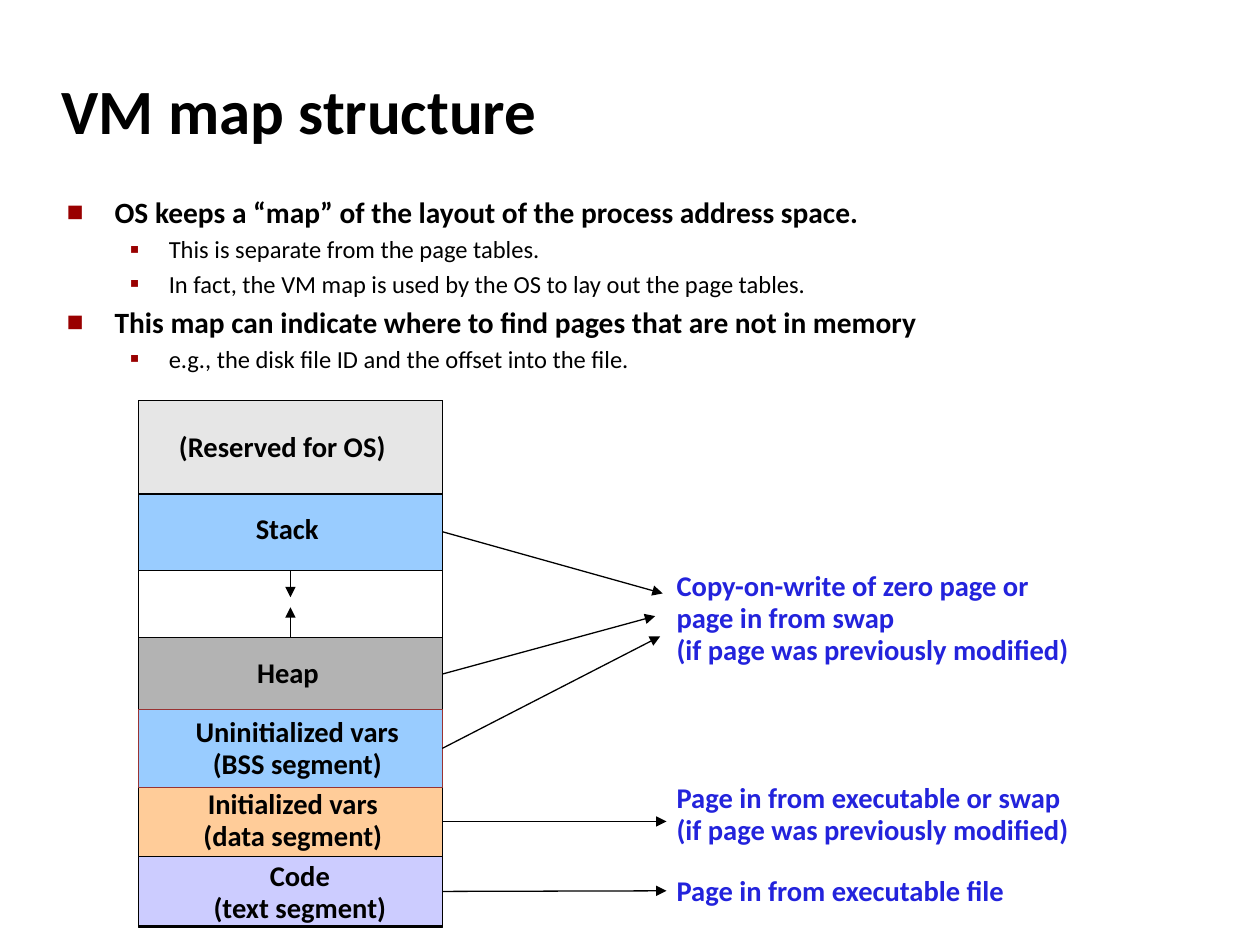
from lxml.etree import SubElement
from pptx import Presentation
from pptx.dml.color import RGBColor
from pptx.enum.shapes import MSO_CONNECTOR, MSO_SHAPE
from pptx.enum.text import MSO_ANCHOR, MSO_AUTO_SIZE, PP_ALIGN
from pptx.oxml.ns import qn
from pptx.util import Inches, Pt

TOP, LEFT, BOTTOM, RIGHT = range(4)
BLACK, BLUE, RED = "000000", "2323DC", "990000"
COLUMN_LEFT, COLUMN_WIDTH = 1.1, 2.41
COLUMN_MIDDLE = COLUMN_LEFT + COLUMN_WIDTH / 2
NOTE_LEFT = 5.37

BULLETS = [
    (0, "OS keeps a “map” of the layout of the process address space."),
    (1, "This is separate from the page tables."),
    (1, "In fact, the VM map is used by the OS to lay out the page tables."),
    (0, "This map can indicate where to find pages that are not in memory"),
    (1, "e.g., the disk file ID and the offset into the file."),
]
BULLET_LEVELS = [
    {"size": 16.8, "bold": True, "margin": 0.38, "hang": 0.38, "mark": "■", "percent": 60},
    {"size": 14, "bold": False, "margin": 0.81, "hang": 0.31, "mark": "▪", "percent": 110},
]
SEGMENTS = {
    "space": (3.18, 4.18, None, BLACK),
    "stack": (3.91, 0.62, "99CCFF", BLACK),
    "code": (6.8, 0.55, "CCCCFF", BLACK),
    "data": (6.24, 0.56, "FFCC99", BLACK),
    "heap": (5.06, 0.58, "B3B3B3", BLACK),
    "bss": (5.63, 0.62, "99CCFF", "993333"),
    "reserved": (3.18, 0.74, "E6E6E6", BLACK),
}
SEGMENT_LABELS = [
    ((1.42, 3.43, 1.9, 0.26), ["(Reserved for OS)"], PP_ALIGN.LEFT),
    ((2.03, 4.08, 0.59, 0.26), ["Stack"], PP_ALIGN.LEFT),
    ((2.04, 5.22, 0.58, 0.26), ["Heap"], PP_ALIGN.LEFT),
    ((1.4, 5.69, 1.92, 0.53), ["Uninitialized vars", "(BSS segment)"], PP_ALIGN.CENTER),
    ((1.51, 6.26, 1.63, 0.53), ["Initialized vars", "(data segment)"], PP_ALIGN.CENTER),
    ((1.59, 6.83, 1.58, 0.53), ["Code", "(text segment)"], PP_ALIGN.CENTER),
]
NOTES = [
    (4.53, ["Copy-on-write of zero page or", "page in from swap",
            "(if page was previously modified)"]),
    (6.21, ["Page in from executable or swap", "(if page was previously modified)"]),
    (6.95, ["Page in from executable file"]),
]
ARROWS = [
    ("stack", BOTTOM, COLUMN_MIDDLE, 4.74),
    ("heap", TOP, COLUMN_MIDDLE, 4.82),
    ("stack", RIGHT, 5.26, 4.71),
    ("heap", RIGHT, 5.2, 4.89),
    ("bss", RIGHT, 5.24, 5.05),
    ("data", RIGHT, 5.29, 6.52),
    ("code", RIGHT, 5.29, 7.07),
]


def color(value):
    """Turn a hex string into a colour."""
    return RGBColor.from_string(value)


def assign(target, values):
    """Set each named attribute of the target."""
    for name, value in values.items():
        setattr(target, name, value)


def place(shape, left, top, width, height):
    """Move and size a shape, in inches."""
    assign(shape, {"left": Inches(left), "top": Inches(top),
                   "width": Inches(width), "height": Inches(height)})


def write(para, text, size, bold=True, ink=BLACK):
    """Add one formatted span to a paragraph."""
    span = para.add_run()
    span.text = text
    assign(span.font, {"name": "Calibri", "size": Pt(size), "bold": bold})
    span.font.color.rgb = color(ink)


def paragraphs(frame, count):
    """Return the first paragraph of a frame and enough new ones."""
    return [frame.paragraphs[0]] + [frame.add_paragraph() for _ in range(count - 1)]


def fill_title(title, text):
    """Place and write the title."""
    place(title, 0.39, 0.48, 8.3, 0.83)
    assign(title.text_frame, {"vertical_anchor": MSO_ANCHOR.MIDDLE,
                              "auto_size": MSO_AUTO_SIZE.NONE})
    para = title.text_frame.paragraphs[0]
    assign(para, {"alignment": PP_ALIGN.LEFT, "line_spacing": 0.94})
    write(para, text, 36)


def set_bullet(para, level):
    """Give a paragraph the indent and mark of its level."""
    properties = para._p.get_or_add_pPr()
    properties.set("marL", str(Inches(level["margin"])))
    properties.set("indent", str(-Inches(level["hang"])))
    SubElement(SubElement(properties, qn("a:buClr")), qn("a:srgbClr"), val=RED)
    SubElement(properties, qn("a:buSzPct"), val=str(level["percent"] * 1000))
    SubElement(properties, qn("a:buFont"), typeface="Calibri")
    SubElement(properties, qn("a:buChar"), char=level["mark"])


def fill_body(body):
    """Place and write the bulleted list."""
    place(body, 0.43, 1.49, 8.64, 1.62)
    body.text_frame.auto_size = MSO_AUTO_SIZE.NONE
    for para, (depth, text) in zip(paragraphs(body.text_frame, len(BULLETS)), BULLETS):
        level = BULLET_LEVELS[depth]
        para.level = depth
        set_bullet(para, level)
        write(para, text, level["size"], level["bold"])


def add_segment(page, top, height, fill, line):
    """Add one block of the address space column."""
    box = page.shapes.add_shape(
        MSO_SHAPE.ROUNDED_RECTANGLE, Inches(COLUMN_LEFT), Inches(top),
        Inches(COLUMN_WIDTH), Inches(height))
    box.adjustments[0] = 0
    box.shadow.inherit = False
    if fill:
        box.fill.solid()
        box.fill.fore_color.rgb = color(fill)
    else:
        box.fill.background()
    box.line.color.rgb = color(line)
    box.line.width = Pt(0.75)
    return box


def add_label(page, area, lines, align=PP_ALIGN.LEFT, ink=BLACK):
    """Add a text box without insets, one paragraph a line."""
    frame = page.shapes.add_textbox(*map(Inches, area)).text_frame
    assign(frame, {"word_wrap": True, "margin_left": 0, "margin_top": 0,
                   "margin_right": 0, "margin_bottom": 0})
    for para, text in zip(paragraphs(frame, len(lines)), lines):
        assign(para, {"alignment": align, "line_spacing": 0.94})
        write(para, text, 16.3, ink=ink)


def add_arrow(page, box, side, end_x, end_y):
    """Add an arrow from the middle of a side of a box to a point."""
    end = Inches(end_x), Inches(end_y)
    arrow = page.shapes.add_connector(MSO_CONNECTOR.STRAIGHT, *end, *end)
    arrow.begin_connect(box, side)
    arrow.line.color.rgb = color(BLACK)
    arrow.line.width = Pt(0.75)
    SubElement(arrow.line._get_or_add_ln(), qn("a:tailEnd"), type="triangle")
    SubElement(arrow._element.spPr, qn("a:effectLst"))


def main():
    """Build and save the slide."""
    deck = Presentation()
    assign(deck, {"slide_width": Inches(10), "slide_height": Inches(7.5)})
    page = deck.slides.add_slide(deck.slide_layouts[1])
    fill_title(page.shapes.title, "VM map structure")
    fill_body(page.placeholders[1])
    boxes = {name: add_segment(page, *values) for name, values in SEGMENTS.items()}
    for area, lines, align in SEGMENT_LABELS:
        add_label(page, area, lines, align)
    for top, lines in NOTES:
        add_label(page, (NOTE_LEFT, top, 3.3, 0.26 * len(lines)), lines, ink=BLUE)
    for name, side, end_x, end_y in ARROWS:
        add_arrow(page, boxes[name], side, end_x, end_y)
    deck.save("out.pptx")


if __name__ == "__main__":
    main()
